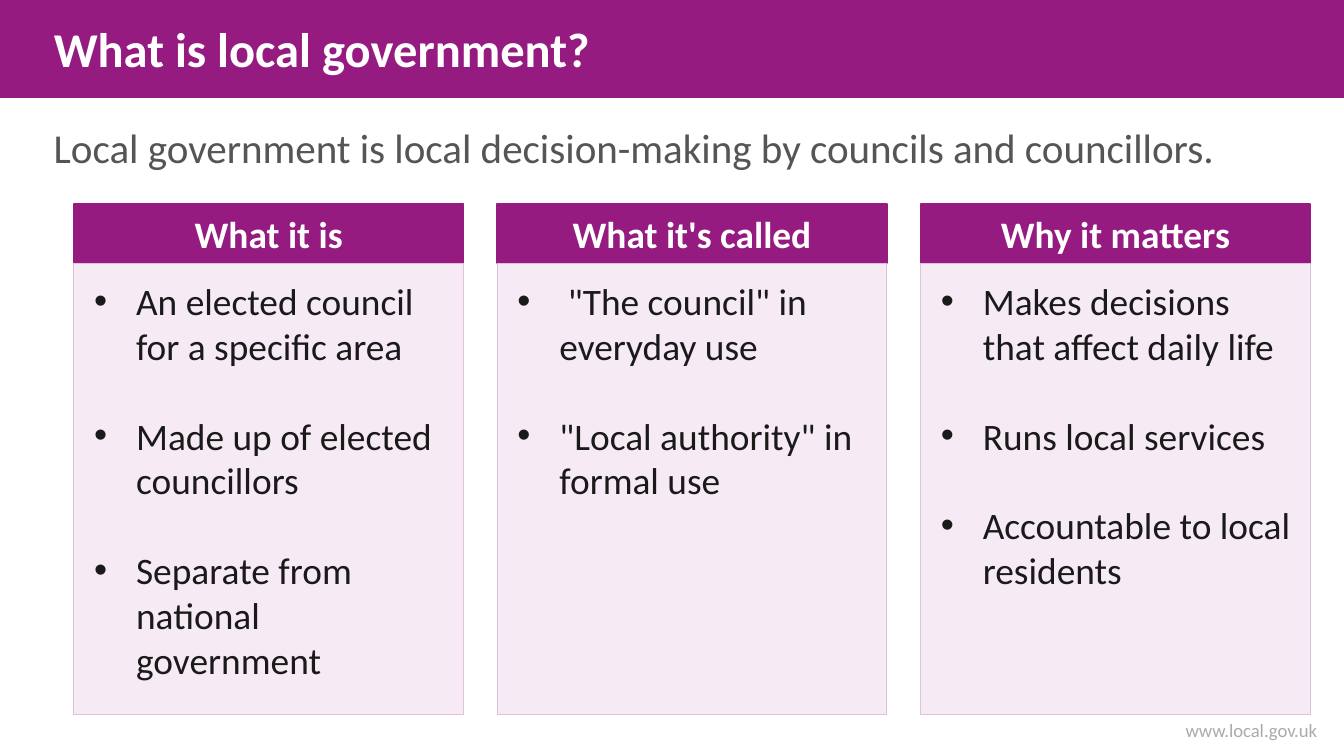
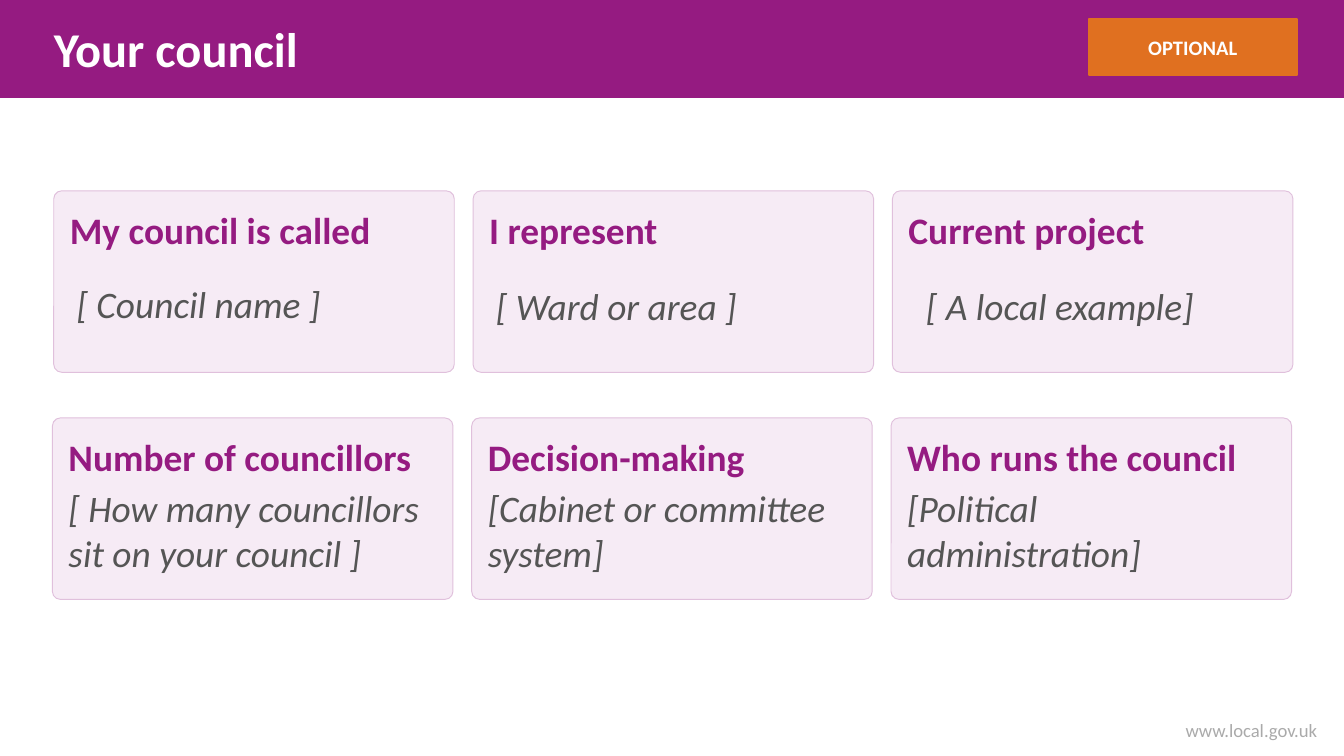
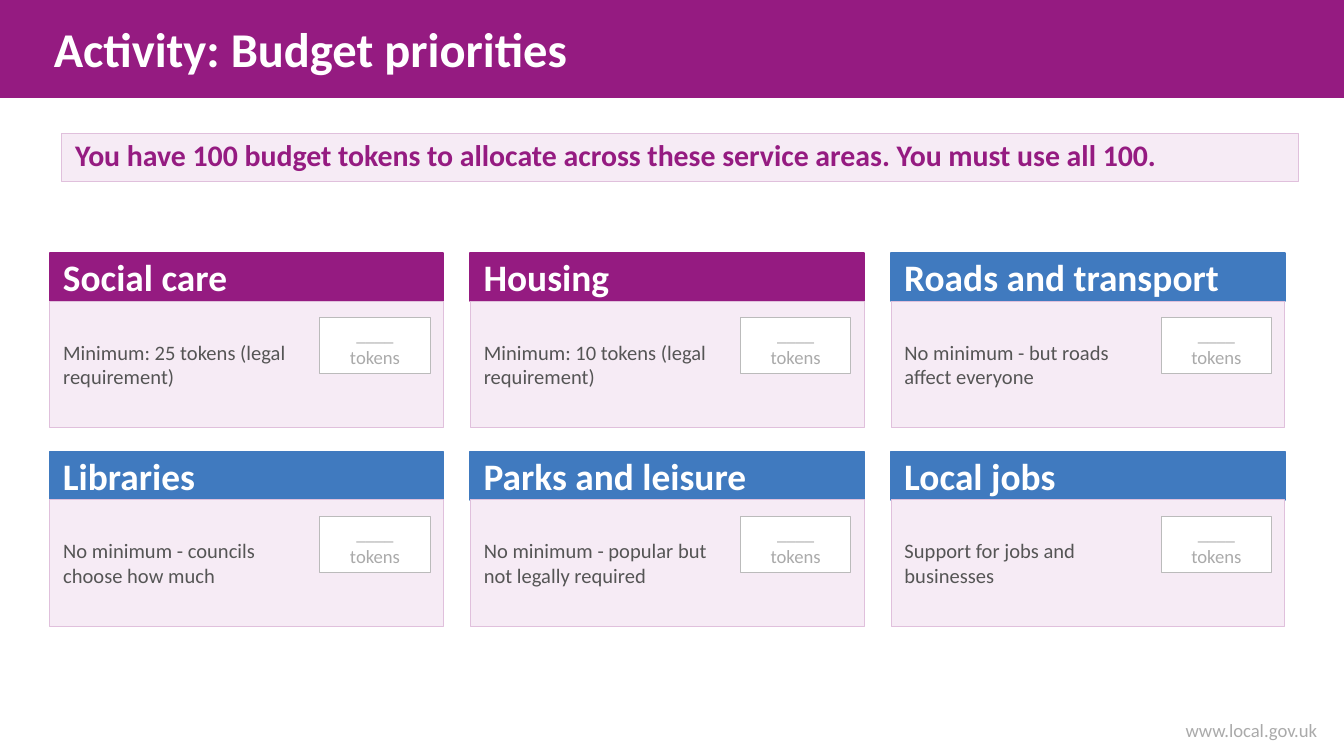
from lxml import etree
from pptx import Presentation
from pptx.dml.color import RGBColor
from pptx.enum.shapes import MSO_SHAPE
from pptx.enum.text import MSO_ANCHOR, MSO_AUTO_SIZE, PP_ALIGN
from pptx.oxml.ns import qn
from pptx.util import Pt

PLUM = RGBColor(0x95, 0x1B, 0x81)
BLUE = RGBColor(0x40, 0x7A, 0xBF)
ORANGE = RGBColor(0xE0, 0x70, 0x20)
PALE = RGBColor(0xF6, 0xEB, 0xF5)
PINK = RGBColor(0xE0, 0xC0, 0xDC)
WHITE = RGBColor(0xFF, 0xFF, 0xFF)
BLACK = RGBColor(0x1A, 0x1A, 0x1A)
GREY = RGBColor(0x55, 0x55, 0x55)
MIST = RGBColor(0xAA, 0xAA, 0xAA)
RULE = RGBColor(0xBB, 0xBB, 0xBB)

FONT = "Calibri"
WIDTH, HEIGHT, BAND = 720, 405, 51.84
LEFT, CENTER, RIGHT = PP_ALIGN.LEFT, PP_ALIGN.CENTER, PP_ALIGN.RIGHT
TOP, MIDDLE = MSO_ANCHOR.TOP, MSO_ANCHOR.MIDDLE


class Deck:
    def __init__(self):
        self.show = Presentation()
        self.show.slide_width = Pt(WIDTH)
        self.show.slide_height = Pt(HEIGHT)
        self.slide = None

    def page(self, title, width=676.8):
        self.slide = self.show.slides.add_slide(self.show.slide_layouts[5])
        band = self.box(0, 0, WIDTH, BAND, PLUM)
        head = self.slide.shapes.title
        self.place(head, 28.8, 0, width, BAND)
        self.letter(head, title, 26, WHITE, bold=True)
        band.element.addnext(head.element)
        self.label("www.local.gov.uk", 547.2, 383.04, 158.4, 15.84, 10, MIST, align=RIGHT)

    def place(self, shape, x, y, w, h):
        shape.left, shape.top, shape.width, shape.height = Pt(x), Pt(y), Pt(w), Pt(h)

    def letter(self, shape, text, size, color, bold=False, italic=False,
               align=LEFT, anchor=MIDDLE, inset=0):
        frame = shape.text_frame
        frame.text = text
        frame.word_wrap = True
        frame.auto_size = MSO_AUTO_SIZE.NONE
        frame.vertical_anchor = anchor
        frame.margin_left = Pt(inset)
        frame.margin_right = frame.margin_top = frame.margin_bottom = 0
        for para in frame.paragraphs:
            para.alignment = align
            for run in para.runs:
                font = run.font
                font.name, font.size = FONT, Pt(size)
                font.bold, font.italic = bold, italic
                font.color.rgb = color

    def label(self, text, x, y, w, h, size, color, **style):
        shape = self.slide.shapes.add_textbox(Pt(x), Pt(y), Pt(w), Pt(h))
        self.letter(shape, text, size, color, **style)
        return shape

    def box(self, x, y, w, h, fill, line=None, kind=MSO_SHAPE.RECTANGLE):
        shape = self.slide.shapes.add_shape(kind, Pt(x), Pt(y), Pt(w), Pt(h))
        shape.shadow.inherit = False
        shape.fill.solid()
        shape.fill.fore_color.rgb = fill
        shape.line.color.rgb = line or fill
        shape.line.width = Pt(0.5 if line else 1)
        return shape

    def panel(self, x, y, w, h, kind=MSO_SHAPE.RECTANGLE):
        return self.box(x, y, w, h, PALE, PINK, kind)

    def header(self, text, x, y, w, h, fill=PLUM, size=20, align=CENTER, inset=0):
        shape = self.box(x, y, w, h, fill)
        self.letter(shape, text, size, WHITE, bold=True, align=align, inset=inset)

    def bullets(self, items, x, y, w, h):
        shape = self.label("\n".join(items), x, y, w, h, 20, BLACK, anchor=TOP)
        for i, para in enumerate(shape.text_frame.paragraphs):
            if i:
                para.space_before = Pt(24)
            props = para._p.get_or_add_pPr()
            props.set("marL", str(Pt(22.5)))
            props.set("indent", str(-Pt(22.5)))
            tint = etree.SubElement(props, qn("a:buClr"))
            etree.SubElement(tint, qn("a:srgbClr")).set("val", str(BLACK))
            etree.SubElement(props, qn("a:buFont")).set("typeface", "Arial")
            etree.SubElement(props, qn("a:buChar")).set("char", "•")

    def card(self, title, answer, x, y, dx, dy):
        shape = self.panel(x, y, 214.56, 97.2, MSO_SHAPE.ROUNDED_RECTANGLE)
        shape.adjustments[0] = 0.044
        self.label(title, x + 8.64, y + 7.2, 198.72, 27.36, 20, PLUM, bold=True)
        self.label(answer, x + dx, y + dy, 198.72, 51.84, 20, GREY, italic=True, anchor=TOP)

    def service(self, name, note, fill, x, y):
        wide, head = 210.96, 25.92
        self.header(name, x, y, wide, head, fill, align=LEFT, inset=7.2)
        y += head
        self.panel(x, y, wide, 67.68)
        self.label(note, x + 7.2, y + 3.6, 131.76, 60.48, 11, GREY)
        slot = self.box(x + 144.72, y + 8.64, 59.04, 30.24, WHITE, RULE)
        self.letter(slot, "____\ntokens", 10, MIST, align=CENTER)


def local(deck):
    deck.page("What is local government?")
    deck.label("Local government is local decision-making by councils and councillors.",
               28.8, 59.04, 662.4, 39.6, 22, GREY)
    columns = [
        ("What it is", ["An elected council for a specific area",
                        "Made up of elected councillors",
                        "Separate from national government"]),
        ("What it's called", [' "The council" in everyday use',
                              '"Local authority" in formal use']),
        ("Why it matters", ["Makes decisions that affect daily life",
                            "Runs local services",
                            "Accountable to local residents"]),
    ]
    for i, (head, items) in enumerate(columns):
        x = 39.6 + 226.8 * i
        deck.header(head, x, 109.44, 208.8, 31.68)
        deck.panel(x, 141.12, 208.8, 241.92)
        deck.bullets(items, x + 10.8, 149.04, 188.64, 222.48)


def council(deck):
    deck.page("Your council", 547.2)
    deck.header("OPTIONAL", 583.2, 10.08, 111.6, 30.24, ORANGE, 11)
    rows = [
        (28.8, 102.24, [
            ("My council is called", "[ Council name ]", 12.24, 48.24),
            ("I represent", "[ Ward or area ]", 12.24, 49.68),
            ("Current project", "[ A local example]", 18, 49.68)]),
        (28.08, 223.92, [
            ("Number of councillors", "[ How many councillors sit on your council ]", 8.64, 36),
            ("Decision-making", "[Cabinet or committee system]", 8.64, 36),
            ("Who runs the council", "[Political administration]", 8.64, 36)]),
    ]
    for x, y, cards in rows:
        for i, (title, answer, dx, dy) in enumerate(cards):
            deck.card(title, answer, x + 224.64 * i, y, dx, dy)


def budget(deck):
    deck.page("Activity: Budget priorities")
    deck.panel(33.12, 71.28, 662.4, 25.92)
    deck.label("You have 100 budget tokens to allocate across these service areas. "
               "You must use all 100.", 40.32, 69.84, 648, 25.92, 16, PLUM, bold=True)
    areas = [
        ("Social care", "Minimum: 25 tokens (legal requirement)", PLUM),
        ("Housing", "Minimum: 10 tokens (legal requirement)", PLUM),
        ("Roads and transport", "No minimum - but roads affect everyone", BLUE),
        ("Libraries", "No minimum - councils choose how much", BLUE),
        ("Parks and leisure", "No minimum - popular but not legally required", BLUE),
        ("Local jobs", "Support for jobs and businesses", BLUE),
    ]
    for i, (name, note, fill) in enumerate(areas):
        row, col = divmod(i, 3)
        deck.service(name, note, fill, 26.64 + 225.36 * col, 135.36 + 106.56 * row)


def main():
    deck = Deck()
    local(deck)
    council(deck)
    budget(deck)
    deck.show.save("out.pptx")


if __name__ == "__main__":
    main()
